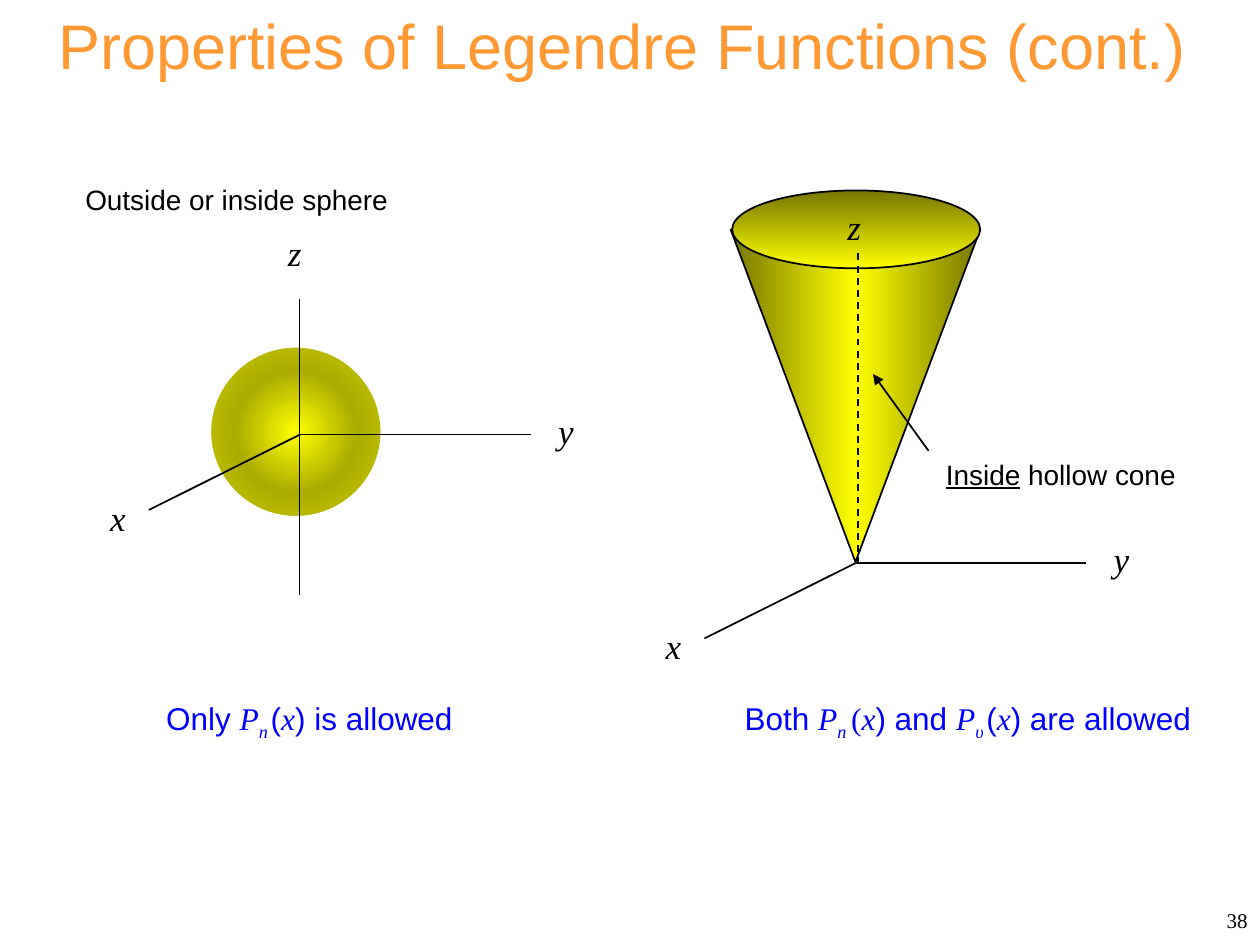
from dataclasses import dataclass

from lxml.etree import SubElement
from pptx import Presentation
from pptx.dml.color import RGBColor
from pptx.enum.dml import MSO_LINE_DASH_STYLE as Dash
from pptx.enum.shapes import MSO_CONNECTOR as Connector, MSO_SHAPE as Shape
from pptx.enum.text import MSO_ANCHOR as Anchor, MSO_AUTO_SIZE as AutoSize, PP_ALIGN as Align
from pptx.oxml.ns import qn
from pptx.util import Cm, Pt

SANS, SERIF = "Arial", "Times New Roman"
BLACK, WHITE, BLUE, ORANGE = "000000", "FFFFFF", "0000FF", "FF9933"
YELLOW, OLIVE = "FFFF00", "767600"


@dataclass
class Box:
    left: float
    top: float
    width: float
    height: float

    def inner(self, left, top, width=0, height=0):
        return Box(self.left + left, self.top + top, width, height)

    def lengths(self):
        return [Cm(value) for value in (self.left, self.top, self.width, self.height)]


def color(value):
    return RGBColor.from_string(value)


def set_font(font, name, size, value, italic=False):
    font.name, font.size, font.italic = name, Pt(size), italic
    font.color.rgb = color(value)


def add_text(page, box, spans, size, name=SANS, value=BLACK, italic=False,
             align=Align.LEFT, wrap=True):
    shape = page.shapes.add_textbox(*box.lengths())
    frame = shape.text_frame
    frame.word_wrap = wrap
    frame.auto_size = AutoSize.SHAPE_TO_FIT_TEXT
    para = frame.paragraphs[0]
    para.alignment = align
    set_font(para.font, name, size, value, italic)
    for text in spans:
        para.add_run().text = text
    return shape


def add_caption(page, box, spans):
    shape = add_text(page, box, [text for text, _ in spans], 18, value=BLUE, wrap=False)
    for run, (_, style) in zip(shape.text_frame.paragraphs[0].runs, spans):
        if style in ("math", "upright", "sub", "gap"):
            run.font.name = SERIF
            run.font.italic = style != "upright"
        if style == "gap":
            run.font.size = Pt(6)
        if style == "sub":
            run.font._element.set("baseline", "-25000")


def add_line(page, start, end, dashed=False, arrow=False):
    line = page.shapes.add_connector(
        Connector.STRAIGHT, Cm(start.left), Cm(start.top), Cm(end.left), Cm(end.top))
    line.line.color.rgb = color(BLACK)
    line.line.width = Pt(1)
    if dashed:
        line.line.dash_style = Dash.DASH
    if arrow:
        SubElement(line.line._get_or_add_ln(), qn("a:tailEnd"), type="triangle")
    SubElement(line._element.spPr, qn("a:effectLst"))


def add_solid(page, kind, box, stops, angle=None, outline=BLACK):
    shape = page.shapes.add_shape(kind, *box.lengths())
    shape.shadow.inherit = False
    shape.line.color.rgb = color(outline)
    shape.line.width = Pt(1)
    shape.fill.gradient()
    gradient = shape._element.spPr.find(qn("a:gradFill"))
    for child in list(gradient):
        gradient.remove(child)
    stop_list = SubElement(gradient, qn("a:gsLst"))
    for index, value in enumerate(stops):
        position = 100000 * index // (len(stops) - 1)
        stop = SubElement(stop_list, qn("a:gs"), pos=str(position))
        SubElement(stop, qn("a:srgbClr"), val=value)
    if angle is None:
        circle = SubElement(gradient, qn("a:path"), path="circle")
        SubElement(circle, qn("a:fillToRect"),
                   {side: "50000" for side in ("l", "t", "r", "b")})
    else:
        SubElement(gradient, qn("a:lin"), ang=str(angle * 60000), scaled="0")
    return shape


def add_axes(page, origin, z_left, z_top):
    add_line(page, origin, origin.inner(4.65, 0))
    add_line(page, origin, origin.inner(-3.05, 1.52))
    labels = [("y", 4.95, -0.63, 0.85, Align.LEFT),
              ("x", -4.08, 1.12, 0.94, Align.LEFT),
              ("z ", z_left, z_top, 1.14, Align.CENTER)]
    for text, left, top, width, align in labels:
        add_text(page, origin.inner(left, top, width, 1.09), [text], 20,
                 SERIF, italic=True, align=align)


def add_sphere_panel(page, box):
    add_solid(page, Shape.OVAL, box.inner(2.77, 3.43, 3.45, 3.43),
              [YELLOW, "ACAC00", "CCCC00"], outline=WHITE)
    add_axes(page, box.inner(4.58, 5.2), -0.59, -4.21)
    add_line(page, box.inner(4.57, 2.46), box.inner(4.57, 8.43))
    add_text(page, box.inner(0, 0, 6.68, 0.94), ["Outside or inside sphere"], 16, wrap=False)
    add_caption(page, box.inner(1.63, 10.41, 6.48, 1.02), [
        ("Only ", "plain"), ("P", "math"), ("n", "sub"), (" ", "gap"),
        ("(", "plain"), ("x", "math"), (") is allowed", "plain")])


def add_cone_panel(page, box):
    cone = add_solid(page, Shape.ISOSCELES_TRIANGLE, box.inner(1.55, 0.79, 5.03, 6.7),
                     [OLIVE, YELLOW, OLIVE], angle=0)
    cone.rotation = 180
    add_solid(page, Shape.OVAL, box.inner(1.58, 0, 5, 1.57), [OLIVE, YELLOW], angle=90)
    add_line(page, box.inner(4.12, 1.27), box.inner(4.12, 7.49), dashed=True)
    add_axes(page, box.inner(4.07, 7.51), -0.51, -7.34)
    note = add_text(page, box.inner(5.64, 5.25, 5.18, 0.94),
                    ["Inside", " hollow cone"], 16, wrap=False)
    note.text_frame.paragraphs[0].runs[0].font.underline = True
    note.fill.solid()
    note.fill.fore_color.rgb = color(WHITE)
    add_line(page, box.inner(5.54, 5.25), box.inner(4.42, 3.7), arrow=True)
    add_caption(page, box.inner(1.58, 10.13, 9.7, 1.02), [
        ("Both ", "plain"), ("P", "math"), ("n ", "sub"), ("(", "upright"),
        ("x", "math"), (") and ", "plain"), ("P", "math"), ("υ", "sub"),
        (" ", "gap"), ("(", "plain"), ("x", "math"), (") are allowed", "plain")])


def add_heading(page, box):
    add_text(page, box, ["Properties of Legendre Functions (cont.)"], 36,
             value=ORANGE, align=Align.CENTER)


def add_page_number(page, box):
    shape = add_text(page, box, ["38"], 12, SERIF, align=Align.RIGHT)
    shape.text_frame.auto_size = AutoSize.NONE
    shape.text_frame.vertical_anchor = Anchor.MIDDLE


def main():
    deck = Presentation()
    deck.slide_width, deck.slide_height = Cm(25.4), Cm(19.05)
    page = deck.slides.add_slide(deck.slide_layouts[6])
    add_sphere_panel(page, Box(1.47, 3.56, 10.4, 11.43))
    add_heading(page, Box(0.69, 0, 23.7, 1.78))
    add_page_number(page, Box(19.48, 18.03, 5.92, 1.02))
    add_cone_panel(page, Box(13.18, 3.84, 11.28, 11.15))
    deck.save("out.pptx")


if __name__ == "__main__":
    main()
